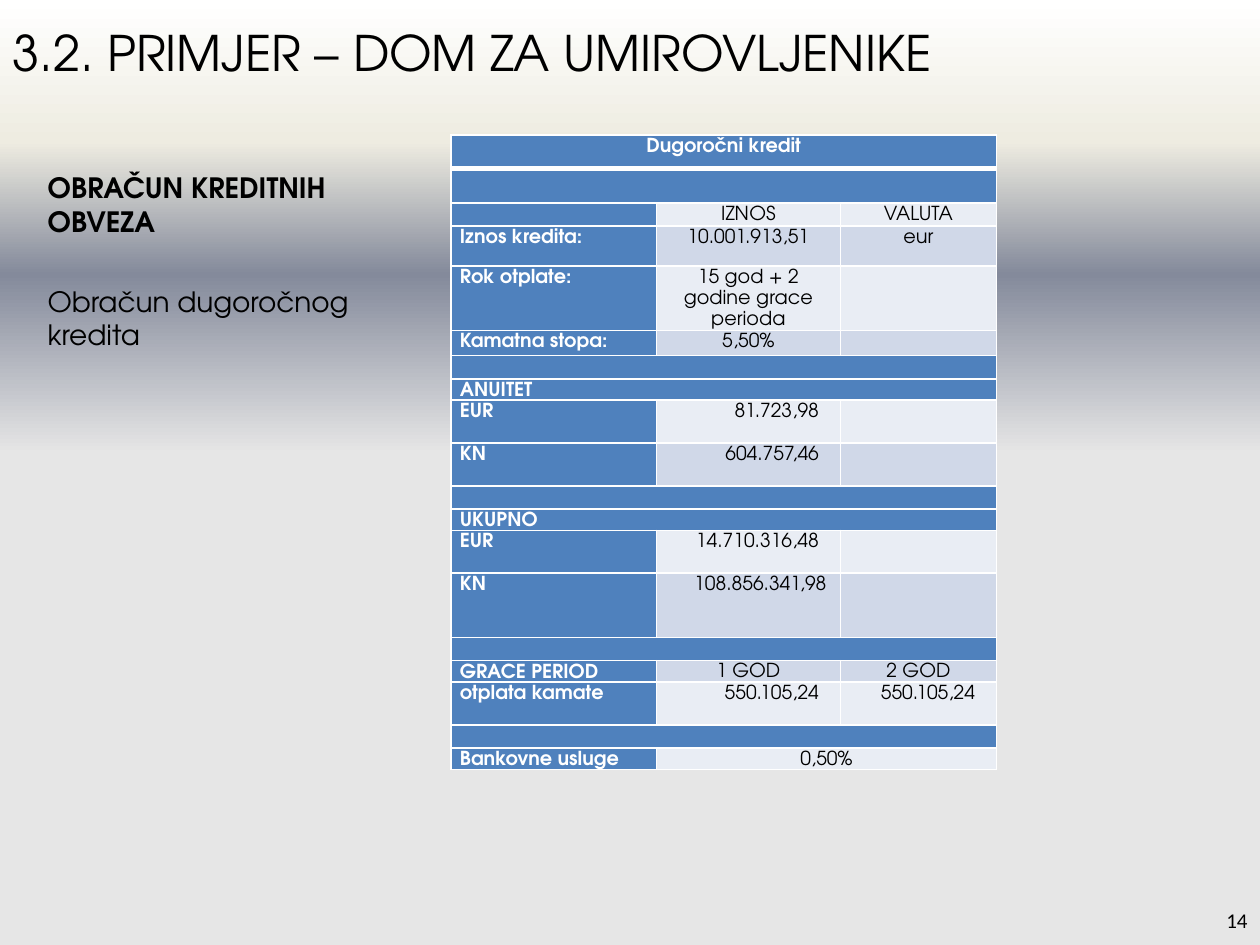
from lxml import etree
from pptx import Presentation
from pptx.dml.color import RGBColor
from pptx.enum.text import MSO_ANCHOR, PP_ALIGN
from pptx.oxml.ns import qn
from pptx.util import Inches, Pt

LEFT, CENTER, RIGHT = PP_ALIGN.LEFT, PP_ALIGN.CENTER, PP_ALIGN.RIGHT
TOP, MIDDLE = MSO_ANCHOR.TOP, MSO_ANCHOR.MIDDLE

FONT = "TeX Gyre Adventor"
BLACK, WHITE, BLUE = "000000", "FFFFFF", "4F81BD"
BANDS = ("E9EDF4", "D0D8E8")
GRADIENT = [(0, "FFFFFF"), (15, "EEECE1"), (29, "848A9B"), (48, "E6E6E6"), (100, "E6E6E6")]

COLUMN_WIDTHS = (1.63, 1.46, 1.24)
CELL_INSET, FIGURE_INSET, LONG_FIGURE_INSET = 0.07, 0.17, 0.11
# Each row: height, label, then its value cells; a row without values spans the table.
CREDIT_ROWS = [
    (0.27, "Dugoročni kredit"),
    (0.27, ""),
    (0.17, "", "IZNOS", "VALUTA"),
    (0.32, "Iznos kredita:", "10.001.913,51", "eur"),
    (0.51, "Rok otplate:", "15 god + 2 godine grace perioda", ""),
    (0.2, "Kamatna stopa:", "5,50%", ""),
    (0.17, ""),
    (0.17, "ANUITET"),
    (0.34, "EUR", ("81.723,98", FIGURE_INSET), ""),
    (0.34, "KN", ("604.757,46", FIGURE_INSET), ""),
    (0.17, ""),
    (0.17, "UKUPNO"),
    (0.34, "EUR", ("14.710.316,48", FIGURE_INSET), ""),
    (0.51, "KN", ("108.856.341,98", LONG_FIGURE_INSET), ""),
    (0.17, ""),
    (0.17, "GRACE PERIOD", "1 GOD", "2 GOD"),
    (0.34, "otplata kamate", ("550.105,24", FIGURE_INSET), ("550.105,24", FIGURE_INSET)),
    (0.17, ""),
    (0.17, "Bankovne usluge", "0,50%"),
]


def rgb(color):
    return RGBColor.from_string(color)


def add_run(paragraph, text, size, color=BLACK, bold=False, font=FONT):
    run = paragraph.add_run()
    run.text = text
    run.font.name = font
    run.font.size = Pt(size)
    run.font.bold = bold
    run.font.color.rgb = rgb(color)


def add_text_frame(slide, left, top, width, height, anchor=MIDDLE):
    shape = slide.shapes.add_textbox(Inches(left), Inches(top), Inches(width), Inches(height))
    frame = shape.text_frame
    frame.word_wrap = True
    frame.vertical_anchor = anchor
    return frame


def set_background(slide):
    fill = slide.background.fill
    fill.gradient()
    fill.gradient_angle = 270
    stops = slide.element.find(".//" + qn("a:gsLst"))
    for stop in list(stops):
        stops.remove(stop)
    for position, color in GRADIENT:
        stop = etree.SubElement(stops, qn("a:gs"), pos=str(position * 1000))
        etree.SubElement(stop, qn("a:srgbClr"), val=color)


def add_title(slide, left, top, width, height):
    paragraph = add_text_frame(slide, left, top, width, height).paragraphs[0]
    add_run(paragraph, "3.2. PRIMJER – DOM ZA UMIROVLJENIKE", 28)


def add_slide_number(slide, left, top, width, height):
    paragraph = add_text_frame(slide, left, top, width, height).paragraphs[0]
    paragraph.alignment = RIGHT
    add_run(paragraph, "14", 12, font="Calibri")


def add_description(slide, left, top, width, height):
    frame = add_text_frame(slide, left, top, width, height, TOP)
    heading = frame.paragraphs[0]
    add_run(heading, "OBRAČUN KREDITNIH OBVEZA", 16, bold=True)
    detail = frame.add_paragraph()
    detail.space_before = Pt(27)
    add_run(detail, "Obračun dugoročnog kredita", 16)
    for paragraph in frame.paragraphs:
        paragraph.line_spacing = Pt(19)


def set_borders(cell, top=1, bottom=1):
    properties = cell._tc.get_or_add_tcPr()
    for side, width in (("L", 1), ("R", 1), ("T", top), ("B", bottom)):
        line = etree.SubElement(properties, qn("a:ln" + side), w=str(Pt(width)))
        fill = etree.SubElement(line, qn("a:solidFill"))
        etree.SubElement(fill, qn("a:srgbClr"), val=WHITE)


def style_cell(cell, fill_color, inset_right=CELL_INSET):
    cell.fill.solid()
    cell.fill.fore_color.rgb = rgb(fill_color)
    cell.margin_left, cell.margin_right = Inches(CELL_INSET), Inches(inset_right)
    cell.margin_top = cell.margin_bottom = 0


def write_cell(cell, text, alignment, color, bold):
    paragraph = cell.text_frame.paragraphs[0]
    paragraph.alignment = alignment
    paragraph.line_spacing = Pt(12)
    if text:
        add_run(paragraph, text, 11, color, bold)
    else:
        etree.SubElement(paragraph._p, qn("a:endParaRPr"), sz="1100")


def add_credit_table(slide, left, top):
    heights = [row[0] for row in CREDIT_ROWS]
    frame = slide.shapes.add_table(
        len(CREDIT_ROWS), len(COLUMN_WIDTHS), Inches(left), Inches(top),
        Inches(sum(COLUMN_WIDTHS)), Inches(sum(heights)))
    table = frame.table
    for column, width in zip(table.columns, COLUMN_WIDTHS):
        column.width = Inches(width)
    last_column = len(COLUMN_WIDTHS) - 1
    for index, (height, *contents) in enumerate(CREDIT_ROWS):
        table.rows[index].height = Inches(height)
        last_content = len(contents) - 1
        for column in range(len(COLUMN_WIDTHS)):
            cell = table.cell(index, column)
            set_borders(cell, top=3 if index == 1 else 1, bottom=3 if index == 0 else 1)
            content = contents[column] if column <= last_content else ""
            is_figure = isinstance(content, tuple)
            text, inset = content if is_figure else (content, CELL_INSET)
            is_label = column == 0 or last_content == 0
            style_cell(cell, BLUE if is_label else BANDS[index % 2], inset)
            if is_figure:
                alignment = RIGHT
            else:
                alignment = LEFT if is_label and index > 0 else CENTER
            write_cell(cell, text, alignment, WHITE if is_label else BLACK, is_label)
        if last_content < last_column:
            table.cell(index, last_content).merge(table.cell(index, last_column))


def main():
    presentation = Presentation()
    presentation.slide_width, presentation.slide_height = Inches(10), Inches(7.5)
    slide = presentation.slides.add_slide(presentation.slide_layouts[6])
    set_background(slide)
    add_slide_number(slide, 9.48, 7.1, 0.52, 0.4)
    add_title(slide, 0, -0.21, 9.88, 1.25)
    add_credit_table(slide, 3.58, 1.07)
    add_description(slide, 0.28, 1.31, 3.31, 3.23)
    presentation.save("out.pptx")


if __name__ == "__main__":
    main()
